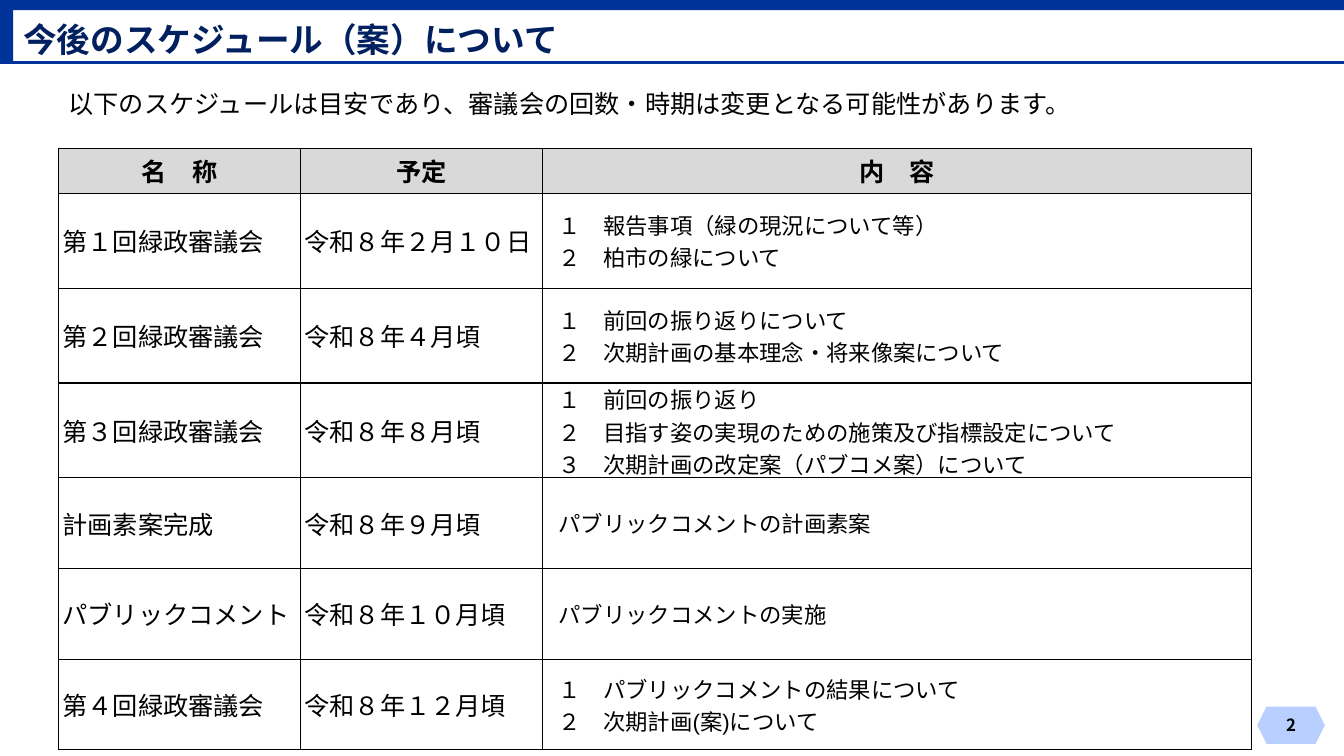
from pptx import Presentation
from pptx import util as u
from pptx.dml.color import RGBColor
from pptx.enum import shapes, text
from pptx.oxml import parse_xml
from pptx.oxml.ns import nsdecls, qn

PX = 9144  # EMU per px, 100 px to the inch
BLUE = RGBColor(0x00, 0x33, 0x99)
NAVY = RGBColor(0x00, 0x20, 0x60)
PALE_BLUE = RGBColor(0xB8, 0xCF, 0xFF)
GREY = RGBColor(0xD9, 0xD9, 0xD9)
BLACK = RGBColor(0, 0, 0)
NOTO = "Noto Sans CJK JP"
LEFT, CENTER, JUSTIFY = (text.PP_ALIGN.LEFT, text.PP_ALIGN.CENTER,
                         text.PP_ALIGN.JUSTIFY)


def write(frame, lines, size, align=LEFT, color=BLACK, bold=False, latin=NOTO):
    frame.word_wrap = True
    frame.vertical_anchor = text.MSO_ANCHOR.MIDDLE
    for index, line in enumerate(lines):
        paragraph = frame.paragraphs[0] if index == 0 else frame.add_paragraph()
        paragraph.alignment = align
        run = paragraph.add_run()
        run.text = line
        run.font.color.rgb = color
        for name, value in {"size": u.Pt(size), "bold": bold, "name": latin}.items():
            setattr(run.font, name, value)
        east_asian = parse_xml(f'<a:ea {nsdecls("a")} typeface="{NOTO}"/>')
        run.font._element.find(qn("a:latin")).addnext(east_asian)


def add_block(kind, box, color):
    shape = slide.shapes.add_shape(kind, *[value * PX for value in box])
    shape.shadow.inherit = False
    shape.fill.solid()
    shape.fill.fore_color.rgb = color
    shape.line.fill.background()
    return shape


presentation = Presentation()
presentation.slide_width = 1333 * PX
presentation.slide_height = 750 * PX
slide = presentation.slides.add_slide(presentation.slide_layouts[5])

# Header band, rule and side bar
add_block(shapes.MSO_SHAPE.RECTANGLE, (0, -2, 1333, 12), BLUE)
add_block(shapes.MSO_SHAPE.RECTANGLE, (0, 8, 13, 54), BLUE)
rule = slide.shapes.add_connector(shapes.MSO_CONNECTOR.STRAIGHT,
                                  0, 62 * PX, 1333 * PX, 62 * PX)
rule.line.color.rgb = BLUE
rule.line.width = u.Pt(1.5)
rule._element.spPr.append(parse_xml(f'<a:effectLst {nsdecls("a")}/>'))

# Title and lead sentence
title = slide.shapes.title
title.left, title.top, title.width, title.height = [
    value * PX for value in (13, 14, 1028, 50)]
title.text_frame.auto_size = text.MSO_AUTO_SIZE.NONE
write(title.text_frame, ["今後のスケジュール（案）について"], 24, color=NAVY, bold=True)

lead = slide.shapes.add_textbox(*[value * PX for value in (58, 83, 1189, 40)])
write(lead.text_frame,
      ["以下のスケジュールは目安であり、審議会の回数・時期は変更となる可能性があります。"], 18)

# Schedule table
SCHEDULE = [
    ("名　称", "予定", ["内　容"]),
    ("第１回緑政審議会", "令和８年２月１０日",
     ["１　報告事項（緑の現況について等）", "２　柏市の緑について"]),
    ("第２回緑政審議会", "令和８年４月頃",
     ["１　前回の振り返りについて", "２　次期計画の基本理念・将来像案について"]),
    ("第３回緑政審議会", "令和８年８月頃",
     ["１　前回の振り返り", "２　目指す姿の実現のための施策及び指標設定について",
      "３　次期計画の改定案（パブコメ案）について"]),
    ("計画素案完成", "令和８年９月頃", ["パブリックコメントの計画素案"]),
    ("パブリックコメント", "令和８年１０月頃", ["パブリックコメントの実施"]),
    ("第４回緑政審議会", "令和８年１２月頃",
     ["１　パブリックコメントの結果について", "２　次期計画(案)について"]),
]
COLUMN_WIDTHS = [240, 240, 703]
ROW_HEIGHTS = [45] + [94] * 3 + [90] * 3

table = slide.shapes.add_table(
    len(ROW_HEIGHTS), len(COLUMN_WIDTHS), 58 * PX, 147 * PX,
    sum(COLUMN_WIDTHS) * PX, sum(ROW_HEIGHTS) * PX).table
table.first_row = table.horz_banding = False
for column, width in zip(table.columns, COLUMN_WIDTHS):
    column.width = width * PX
for row, height in zip(table.rows, ROW_HEIGHTS):
    row.height = height * PX

for row_index, (name, date, content) in enumerate(SCHEDULE):
    header = row_index == 0
    for column_index, lines in enumerate(([name], [date], content)):
        cell = table.cell(row_index, column_index)
        detail = column_index == 2 and not header
        margins = {"margin_left": (16 if detail else 4) * PX, "margin_top": 0,
                   "margin_right": 4 * PX, "margin_bottom": 0}
        for margin, value in margins.items():
            setattr(cell, margin, value)
        cell.vertical_anchor = text.MSO_ANCHOR.MIDDLE
        write(cell.text_frame, lines, 16 if detail else 18,
              CENTER if header else JUSTIFY, bold=header, latin="Arial")
        # Borders come before the fill in the cell properties
        properties = cell._tc.get_or_add_tcPr()
        for side in ("L", "R", "T", "B"):
            under_header = (row_index, side) in ((0, "B"), (1, "T"))
            width = u.Pt(1.5 if under_header else 1)
            properties.append(parse_xml(
                f'<a:ln{side} {nsdecls("a")} w="{width}"><a:solidFill>'
                f'<a:srgbClr val="{BLACK}"/></a:solidFill></a:ln{side}>'))
        if header:
            cell.fill.solid()
            cell.fill.fore_color.rgb = GREY
        else:
            cell.fill.background()

# Page number
badge = add_block(shapes.MSO_SHAPE.HEXAGON, (1247, 701, 67, 37), PALE_BLUE)
for margin in ("margin_left", "margin_top", "margin_right", "margin_bottom"):
    setattr(badge.text_frame, margin, 0)
write(badge.text_frame, ["2"], 12, CENTER, bold=True)

presentation.save("out.pptx")
